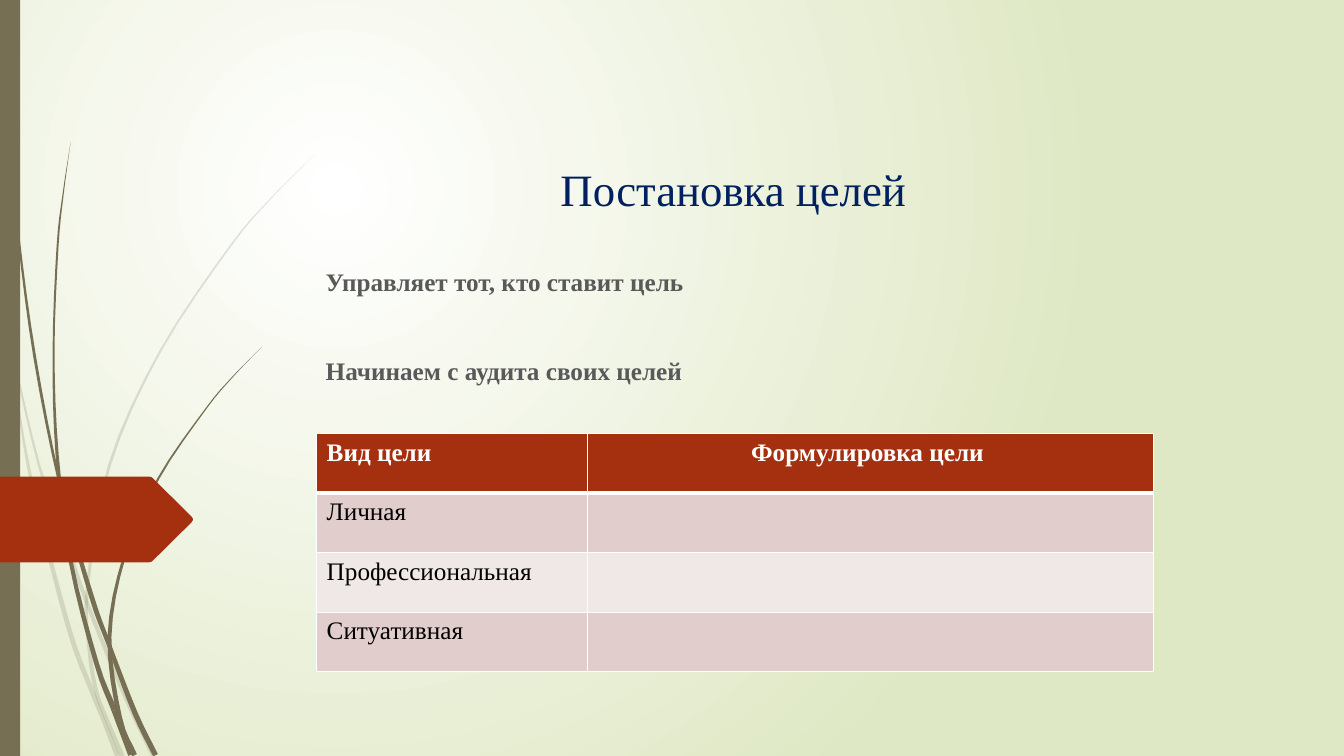
from dataclasses import dataclass
from math import hypot

from lxml.etree import SubElement
from pptx import Presentation
from pptx.dml.color import RGBColor
from pptx.enum.shapes import MSO_SHAPE
from pptx.enum.text import MSO_ANCHOR, PP_ALIGN
from pptx.oxml.ns import qn
from pptx.util import Cm, Pt


@dataclass(frozen=True)
class Theme:
    font: str = "Times New Roman"
    title_size: int = 32
    body_size: int = 18
    white: str = "FFFFFF"
    black: str = "000000"
    backdrop: str = "DFE8C4"
    stem: str = "766F54"
    accent: str = "A53010"
    title: str = "002060"
    body: str = "595959"
    bands: tuple = ("E1CDCC", "F0E8E7")


theme = Theme()


def paint(shape, color):
    shape.shadow.inherit = False
    shape.fill.solid()
    shape.fill.fore_color.rgb = RGBColor.from_string(color)
    shape.line.fill.background()


def style(p, size, color, bold=False, align=PP_ALIGN.LEFT):
    p.alignment = align
    p.font.name = theme.font
    p.font.size = Pt(size)
    p.font.bold = bold
    p.font.color.rgb = RGBColor.from_string(color)


prs = Presentation()
prs.slide_width, prs.slide_height = Cm(33.87), Cm(19.05)
s = prs.slides.add_slide(prs.slide_layouts[6])

# Radial background, centred a quarter of the way in
fill = s.background.fill
fill.gradient()
for stop, color in zip(fill.gradient_stops, (theme.white, theme.backdrop)):
    stop.color.rgb = RGBColor.from_string(color)
grad = s.element.find(".//" + qn("a:gradFill"))
grad.remove(grad.find(qn("a:lin")))
circle = SubElement(grad, qn("a:path"), {"path": "circle"})
SubElement(circle, qn("a:fillToRect"), l="50000", t="50000", r="100000", b="100000")

# Side bar
paint(s.shapes.add_shape(MSO_SHAPE.RECTANGLE, 0, 0, Cm(0.51), Cm(19.05)), theme.stem)

# Grass blades: opacity in percent, knots where a new section starts,
# then (x, y, width) along the centre line in cm
blades = [
    (20, [3], [(0.25, 8.64, 0.05), (0.97, 11.68, 0.06), (1.52, 13.23, 0.1),
               (2.18, 15.16, 0.1), (3.18, 17.6, 0.11), (3.87, 19.05, 0.12)]),
    (20, [4], [(0.28, 8.89, 0), (0.75, 11.93, 0.08), (1.71, 15.75, 0.12),
               (2.3, 17.37, 0.12), (2.6, 18.13, 0.1), (2.96, 19.05, 0.12)]),
    (20, [5, 8], [(7.92, 3.9, 0), (6.81, 5.02, 0.02), (5.8, 6.21, 0.04),
                  (4.04, 8.85, 0.05), (2.76, 11.72, 0.07), (2.2, 14.83, 0.08),
                  (2.26, 16.41, 0.1), (2.42, 17.4, 0.1), (2.66, 18.06, 0.1),
                  (3.08, 19.05, 0.12)]),
    (100, [4, 6], [(0.09, 0, 0.02), (0.19, 2.79, 0.03), (0.46, 5.89, 0.05),
                   (0.88, 9.02, 0.07), (1.51, 12.2, 0.07), (2.3, 15.01, 0.12),
                   (2.74, 16.23, 0.11), (3.4, 17.96, 0.13), (3.92, 19.03, 0.13)]),
    (100, [4, 7], [(1.78, 3.58, 0), (1.59, 4.9, 0.03), (1.45, 6.22, 0.05),
                   (1.35, 8.86, 0.05), (1.44, 11.46, 0.08), (1.78, 14.14, 0.1),
                   (2.43, 16.71, 0.12), (2.88, 17.9, 0.14), (3.28, 19.03, 0.1)]),
    (100, [5, 6], [(6.6, 8.74, 0), (5.87, 9.49, 0.02), (5.19, 10.3, 0.03),
                   (3.99, 12.06, 0.05), (3.14, 14.01, 0.07), (2.76, 16.05, 0.1),
                   (3.02, 18.1, 0.12), (3.39, 19.03, 0.13)]),
]
STEPS = 4
outlines = []
for opacity, cuts, knots in blades:
    # Catmull-Rom spline through the knots, run on straight at both ends
    first, last = [[2 * u - v for u, v in zip(end, inner)]
                   for end, inner in (knots[:2], knots[:-3:-1])]
    padded = [first, *knots, last]
    curve = []
    for a, b, c, d in zip(padded, padded[1:], padded[2:], padded[3:]):
        for i in range(STEPS):
            t = i / STEPS
            curve.append([
                q + t / 2 * (r - p + t * (2 * p - 5 * q + 4 * r - w + t * (3 * (q - r) + w - p)))
                for p, q, r, w in zip(a, b, c, d)
            ])
    curve.append(knots[-1])

    # Offset both edges by half the width, at right angles to the curve
    left, right = [], []
    for before, (x, y, width), after in zip(curve[:1] + curve, curve, curve[1:] + curve[-1:]):
        dx, dy = after[0] - before[0], after[1] - before[1]
        half = width / 2 / hypot(dx, dy)
        left.append((x - dy * half, y + dx * half))
        right.append((x + dy * half, y - dx * half))
    bounds = [0, *cuts, len(knots) - 1]
    for start, end in zip(bounds, bounds[1:]):
        section = slice(start * STEPS, end * STEPS + 1)
        outlines.append((left[section] + right[section][::-1], theme.stem, opacity))

# Page arrow with softened corners, mirrored about its middle
middle = 13.09
upper = [(0, 12.01), (3.75, 12.01), (3.81, 12.02), (3.85, 12.05), (4.83, 13.02), (4.86, 13.07)]
lower = [(x, 2 * middle - y) for x, y in reversed(upper)]
outlines.append((upper + lower, theme.accent, 100))

for points, color, opacity in outlines:
    start, *rest = [(Cm(x), Cm(y)) for x, y in points]
    builder = s.shapes.build_freeform(*start)
    builder.add_line_segments(rest, close=True)
    shape = builder.convert_to_shape()
    paint(shape, color)
    if opacity < 100:
        rgb = shape.element.spPr.find(qn("a:solidFill")).find(qn("a:srgbClr"))
        SubElement(rgb, qn("a:alpha"), val=str(opacity * 1000))

# Title
tf = s.shapes.add_textbox(Cm(7.32), Cm(3.12), Cm(22.33), Cm(2.44)).text_frame
tf.word_wrap = True
tf.vertical_anchor = MSO_ANCHOR.BOTTOM
p = tf.paragraphs[0]
p.text = "Постановка целей"
style(p, theme.title_size, theme.title, align=PP_ALIGN.CENTER)

# Subtitle
tf = s.shapes.add_textbox(Cm(7.96), Cm(6.58), Cm(21.69), Cm(10.44)).text_frame
tf.word_wrap = True
tf.text = "Управляет тот, кто ставит цель\nНачинаем с аудита своих целей"
for p in tf.paragraphs:
    style(p, theme.body_size, theme.body, bold=True)
tf.paragraphs[1].space_before = Pt(42.5)

# Goals table
goals = [
    ("Вид цели", "Формулировка цели "),
    ("Личная", ""),
    ("Профессиональная", ""),
    ("Ситуативная", ""),
]
col_widths, row_height = (6.83, 14.26), 1.5
table = s.shapes.add_table(
    len(goals), len(col_widths), Cm(7.98), Cm(10.93),
    Cm(sum(col_widths)), Cm(row_height * len(goals)),
).table
for column, width in zip(table.columns, col_widths):
    column.width = Cm(width)
for i, row in enumerate(goals):
    table.rows[i].height = Cm(row_height)
    header = i == 0
    for j, text in enumerate(row):
        cell = table.cell(i, j)
        p = cell.text_frame.paragraphs[0]
        p.text = text
        style(p, theme.body_size, theme.white if header else theme.black, bold=header,
              align=PP_ALIGN.CENTER if header and j else PP_ALIGN.LEFT)
        for side in "LRTB":
            thick = (i, side) in ((0, "B"), (1, "T"))
            line = SubElement(cell._tc.get_or_add_tcPr(), qn("a:ln" + side),
                              w=str(Pt(3 if thick else 1)))
            SubElement(SubElement(line, qn("a:solidFill")), qn("a:srgbClr"), val=theme.white)
        cell.fill.solid()
        cell.fill.fore_color.rgb = RGBColor.from_string(
            theme.accent if header else theme.bands[(i - 1) % 2])

prs.save("out.pptx")
